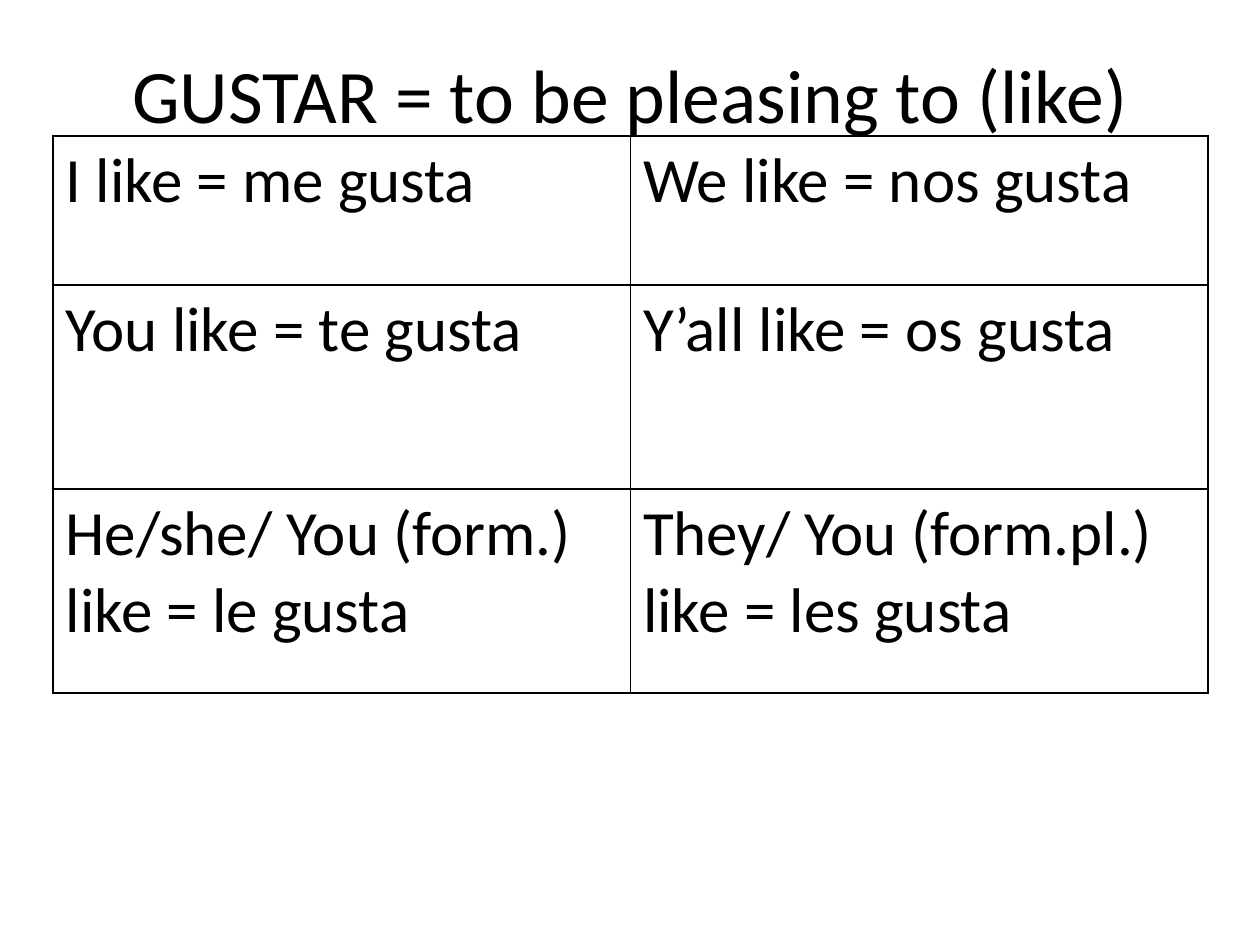
from lxml.etree import SubElement as Sub
from pptx import Presentation
from pptx.dml.color import RGBColor as Rgb
from pptx.enum.text import MSO_ANCHOR as Anchor, PP_ALIGN as Align
from pptx.oxml.ns import qn
from pptx.util import Emu, Pt

SCALE = 914400 / 126  # EMU in one px
FONT, INK, PAPER = "Calibri", "000000", "FFFFFF"

TITLE = "GUSTAR = to be pleasing to (like)"
FORMS = [
    ("I like = me gusta", "We like = nos gusta"),
    ("You like = te gusta", "Y’all like = os gusta"),
    ("He/she/ You (form.) like = le gusta",
     "They/ You (form.pl.) like = les gusta"),
]
HEIGHTS = [149, 204, 204]
WIDTH = 1155


def px(n):
    return Emu(round(n * SCALE))


def color(code):
    return Rgb.from_string(code)


def write(frame, text, size, align=Align.LEFT, anchor=Anchor.TOP, ink=INK):
    frame.word_wrap = True
    frame.vertical_anchor = anchor
    par = frame.paragraphs[0]
    par.alignment = align
    run = par.add_run()
    run.text = text
    run.font.name = FONT
    run.font.size = Pt(size)
    run.font.color.rgb = color(ink)


def border(cell, width=1, ink=INK):
    props = cell._tc.get_or_add_tcPr()
    for at, side in enumerate(("lnL", "lnR", "lnT", "lnB")):
        line = Sub(props, qn(f"a:{side}"), w=str(Pt(width)))
        fill = Sub(line, qn("a:solidFill"))
        Sub(fill, qn("a:srgbClr"), val=ink)
        props.insert(at, line)  # borders come before the cell fill


def add_title(slide):
    title = slide.shapes.title
    title.left, title.top = px(63), px(38)
    title.width, title.height = px(1134), px(110)
    write(title.text_frame, TITLE, 43.2, align=Align.CENTER,
          anchor=Anchor.MIDDLE)


def add_grid(slide):
    cols = len(FORMS[0])
    table = slide.shapes.add_table(
        len(FORMS), cols, px(53), px(136), px(WIDTH), px(sum(HEIGHTS))).table
    table.first_row = table.horz_banding = False
    for col in table.columns:
        col.width = px(WIDTH / cols)
    for row, high, texts in zip(table.rows, HEIGHTS, FORMS):
        row.height = px(high)
        for cell, text in zip(row.cells, texts):
            cell.fill.solid()
            cell.fill.fore_color.rgb = color(PAPER)
            border(cell)
            write(cell.text_frame, text, 36)


def main():
    deck = Presentation()
    deck.slide_width, deck.slide_height = px(1260), px(945)
    slide = deck.slides.add_slide(deck.slide_layouts[5])

    # The table's white cells must not cover the title's descenders
    add_grid(slide)
    add_title(slide)
    tree = slide.shapes._spTree
    tree.append(slide.shapes.title._element)

    deck.save("out.pptx")


if __name__ == "__main__":
    main()
